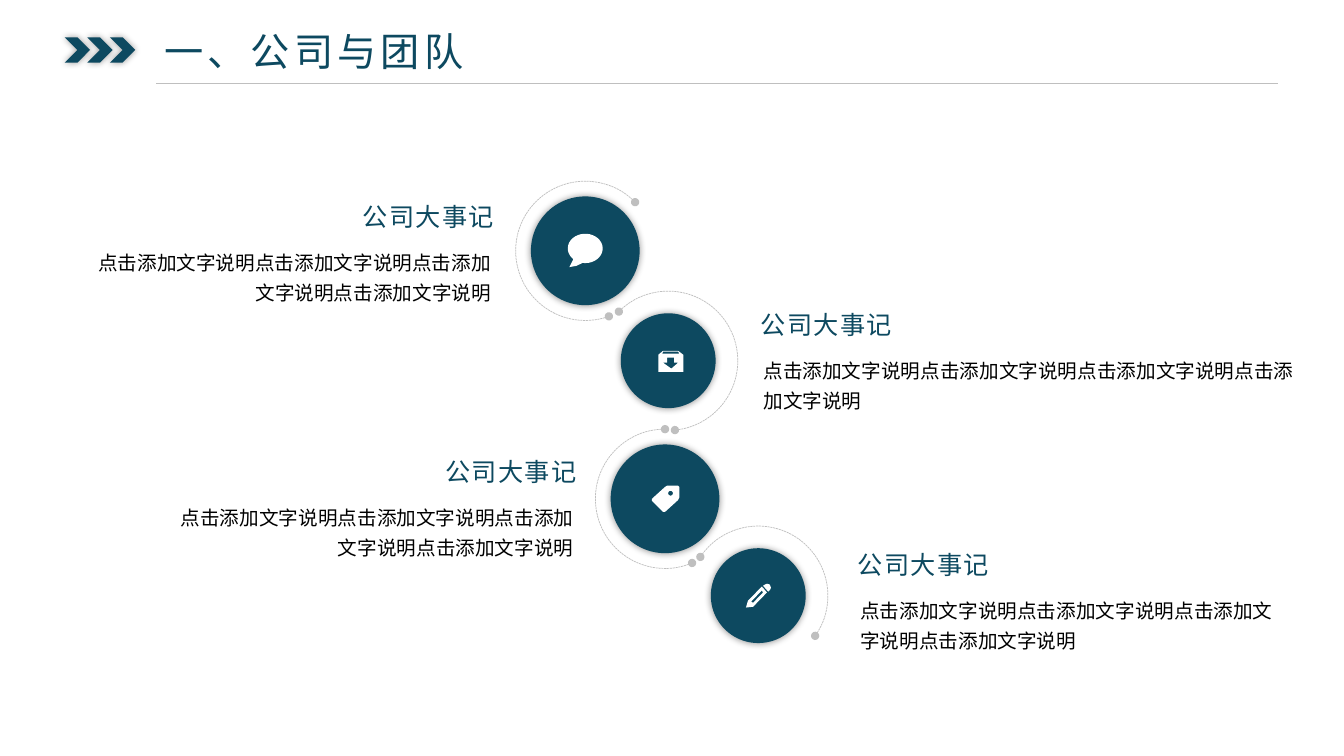
from math import cos, radians, sin

from lxml import etree
from pptx import Presentation, util as u
from pptx.dml.color import RGBColor
from pptx.enum import dml, shapes, text
from pptx.oxml import ns

TEAL, GREY, WHITE, BLACK = "0D4960", "BFBFBF", "FFFFFF", "000000"
HEAD, BODY = "Noto Sans CJK JP", "Noto Sans CJK SC"
KIND = shapes.MSO_SHAPE
LEFT, RIGHT = text.PP_ALIGN.LEFT, text.PP_ALIGN.RIGHT


def color(code):
    return RGBColor.from_string(code)


def add(node, tag, **attrs):
    return etree.SubElement(node, ns.qn(tag), attrs)


def ring(x, y, rx, ry, start=0, end=360):
    """Points along an ellipse, one every few degrees."""
    count = 32
    turns = [radians(start + (end - start) * i / count) for i in range(count + 1)]
    return [(x + rx * cos(t), y + ry * sin(t)) for t in turns]


class Deck:
    def __init__(self):
        self.show = Presentation()
        self.show.slide_width, self.show.slide_height = u.Cm(33.87), u.Cm(19.05)
        self.slide = self.show.slides.add_slide(self.show.slide_layouts[6])
        self.items = self.slide.shapes

    def shape(self, kind, x, y, size, fill=TEAL):
        item = self.items.add_shape(kind, u.Cm(x), u.Cm(y), u.Cm(size), u.Cm(size))
        item.shadow.inherit = False
        item.line.fill.background()
        if fill:
            item.fill.solid()
            item.fill.fore_color.rgb = color(fill)
        else:
            item.fill.background()
        return item

    def glow(self, kind, x, y, size):
        item = self.shape(kind, x, y, size)
        effects = item._element.spPr.find(ns.qn("a:effectLst"))
        shade = add(effects, "a:outerShdw", blurRad=str(u.Pt(5)), algn="ctr", rotWithShape="0")
        add(add(shade, "a:srgbClr", val=BLACK), "a:alpha", val="40000")

    def arc(self, x, y, size, turn, start, end):
        item = self.shape(KIND.ARC, x, y, size, None)
        item.adjustments[0], item.adjustments[1] = start, end
        item.rotation = turn
        item._element.spPr.xfrm.set("flipH", "1")
        item.line.color.rgb = color(GREY)
        item.line.width = u.Pt(0.5)
        item.line.dash_style = dml.MSO_LINE.SQUARE_DOT
        line = item.line._get_or_add_ln()
        add(line, "a:headEnd", type="oval")
        add(line, "a:tailEnd", type="oval")

    def rule(self, x, y, end):
        item = self.items.add_connector(
            shapes.MSO_CONNECTOR.STRAIGHT, u.Cm(x), u.Cm(y), u.Cm(end), u.Cm(y))
        item.line.color.rgb = color(GREY)
        item.line.width = u.Pt(0.5)
        add(item._element.spPr, "a:effectLst")

    def icon(self, x, y, parts):
        """One white outline; parts are point lists around the centre."""
        parts = [[(u.Cm(x + dx), u.Cm(y + dy)) for dx, dy in part] for part in parts]
        pen = self.items.build_freeform(*parts[0][0])
        for part in parts:
            if part is not parts[0]:
                pen.move_to(*part[0])
            pen.add_line_segments(part[1:], close=True)
        item = pen.convert_to_shape()
        item.shadow.inherit = False
        item.fill.solid()
        item.fill.fore_color.rgb = color(WHITE)
        item.line.fill.background()

    def text(self, words, x, y, w, h, size, font, tint, align=LEFT,
             space=0, lead=None, inset=(0.25, 0.13)):
        box = self.items.add_textbox(u.Cm(x), u.Cm(y), u.Cm(w), u.Cm(h))
        frame = box.text_frame
        frame.text = words
        frame.word_wrap = True
        frame.auto_size = text.MSO_AUTO_SIZE.SHAPE_TO_FIT_TEXT
        frame.margin_left = frame.margin_right = u.Cm(inset[0])
        frame.margin_top = frame.margin_bottom = u.Cm(inset[1])
        para = frame.paragraphs[0]
        para.alignment = align
        if lead:
            para.line_spacing = lead
        run = para.runs[0]
        run.font.size = u.Pt(size)
        run.font.color.rgb = color(tint)
        run.font.name = font
        props = run._r.get_or_add_rPr()
        add(props, "a:ea", typeface=font)
        if space:
            props.set("spc", str(space * 100))


# Icon outlines, in cm from the circle's centre
BUBBLE = [ring(0, -0.06, 0.44, 0.37, 133, 459) + [(-0.22, 0.38), (-0.4, 0.41)]]
BOX = [
    [(0.25, -0.25), (-0.13, -0.25), (-0.25, -0.15), (-0.25, 0.28), (0.38, 0.28), (0.38, -0.15)],
    [(0.08, 0.2), (-0.13, 0.05), (-0.03, 0.05), (-0.03, -0.08),
     (0.15, -0.08), (0.15, 0.05), (0.25, 0.05)],
    [(-0.15, -0.18), (-0.13, -0.23), (0.25, -0.23), (0.28, -0.18)],
]
TAG = [
    [(0.33, -0.33), (0.05, -0.33), (0, -0.3), (-0.33, 0), (-0.33, 0.05), (-0.05, 0.33),
     (0, 0.33), (0.33, 0.03), (0.36, -0.03), (0.36, -0.3)],
    ring(0.14, -0.14, 0.06, 0.06),
]
PEN = [
    [(0.22, -0.3), (0.29, -0.28), (0.32, -0.2), (0.3, -0.15), (0.25, -0.1),
     (0.12, -0.25), (0.17, -0.28)],
    [(-0.26, 0.13), (-0.31, 0.3), (-0.13, 0.28), (0.22, -0.08), (0.09, -0.23)],
    [(0.12, -0.08), (-0.13, 0.18), (-0.18, 0.15), (0.09, -0.13)],
]

# Circles: centre, diameter, arc turn, arc start and end, icon
NODES = [
    (14.75, 6.32, 2.74, 45.7, 162, 93.31, BUBBLE),
    (16.76, 12.57, 2.74, 0, 162, 67.72, TAG),
    (16.84, 9.09, 2.39, 136.3, 139.12, 54.82, BOX),
    (19.11, 15.01, 2.39, 125.2, 162, 54.82, PEN),
]
# Notes: inner edge, top, body width, alignment
NOTES = [
    (12.7, 4.95, 10.9, RIGHT),
    (18.92, 7.67, 13.89, LEFT),
    (14.78, 11.38, 10.9, RIGHT),
    (21.36, 13.72, 11.18, LEFT),
]
ORBIT, WIDE = 3.51, 6


def main():
    deck = Deck()

    # Title bar
    for i in range(3):
        deck.glow(KIND.CHEVRON, 1.63 + 0.57 * i, 0.94, 0.64)
    deck.text("一、公司与团队", 3.94, 0.58, 14.73, 1.4, 28, HEAD, TEAL,
              space=3, inset=(0.2, 0.1))
    deck.rule(3.94, 2.11, 32.21)

    # Circles with arcs and icons
    for x, y, size, turn, start, end, icon in NODES:
        deck.glow(KIND.OVAL, x - size / 2, y - size / 2, size)
        deck.arc(x - ORBIT / 2, y - ORBIT / 2, ORBIT, turn, start, end)
        deck.icon(x, y, icon)

    # Notes beside the circles
    for edge, top, width, align in NOTES:
        right = align == RIGHT
        deck.text("公司大事记", edge - WIDE if right else edge, top, WIDE, 1.02,
                  18, HEAD, TEAL, align, space=1)
        deck.text("点击添加文字说明" * 4, edge - 0.07 - width if right else edge + 0.07,
                  top + 1.06, width, 1.8, 14, BODY, BLACK, align, lead=1.3)

    deck.show.save("out.pptx")


if __name__ == "__main__":
    main()
